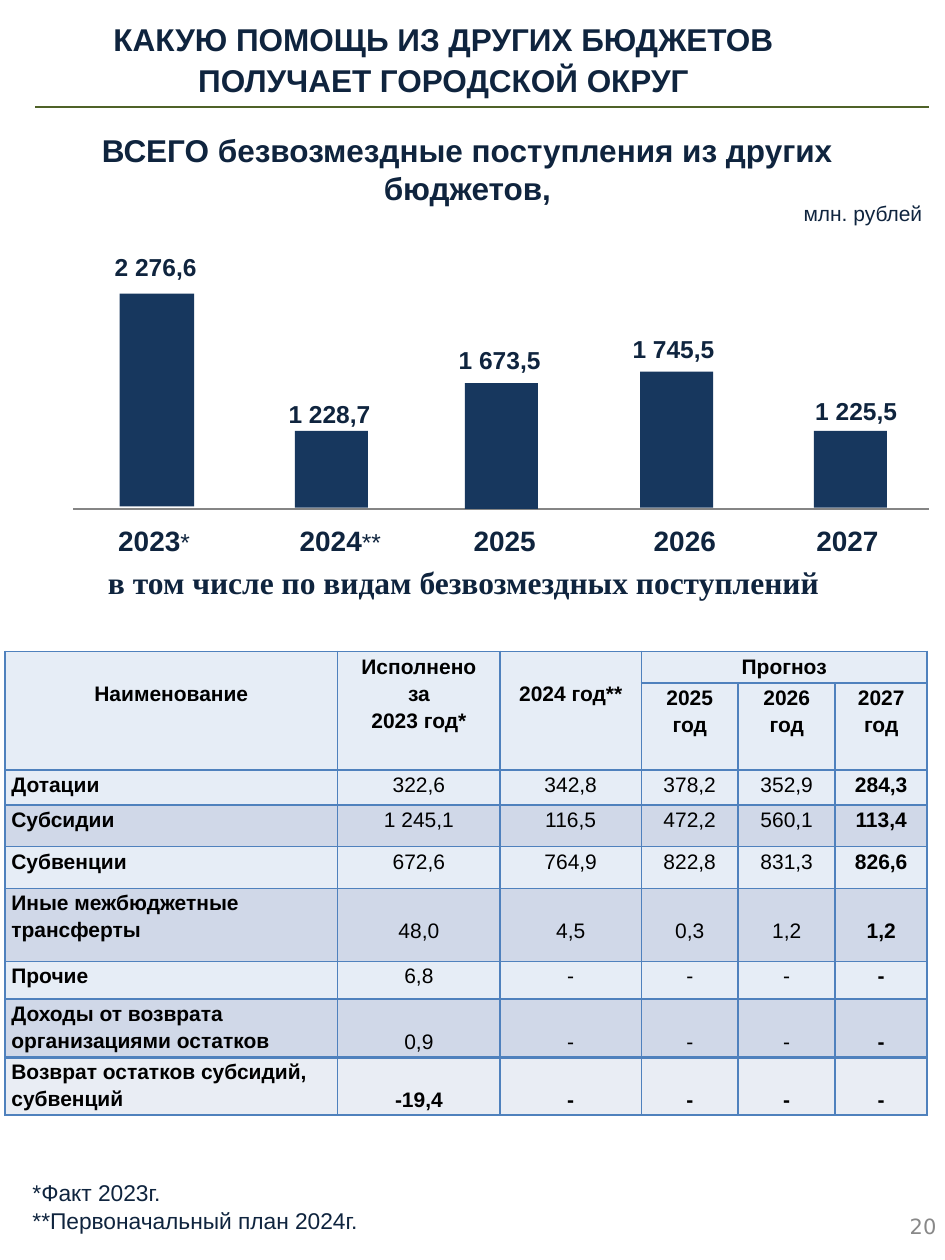
"""Build the slide on aid to the city district from other budgets."""
from dataclasses import dataclass

from lxml import etree
from pptx import Presentation
from pptx.dml.color import RGBColor
from pptx.enum.shapes import MSO_CONNECTOR, MSO_SHAPE
from pptx.enum.text import PP_ALIGN
from pptx.oxml.ns import qn
from pptx.util import Inches, Pt

LEFT, MID, RIGHT = PP_ALIGN.LEFT, PP_ALIGN.CENTER, PP_ALIGN.RIGHT
RECT = MSO_SHAPE.RECTANGLE
LINE = MSO_CONNECTOR.STRAIGHT


@dataclass(frozen=True)
class Theme:
    ink: str = "0F243E"
    bar: str = "17375E"
    axis: str = "858585"
    rule: str = "4F6228"
    edge: str = "4F81BD"
    grey: str = "888888"
    black: str = "000000"
    light: str = "E6EDF6"
    dark: str = "D0D8E8"
    last: str = "E9EDF4"
    sans: str = "Arial"
    serif: str = "Times New Roman"
    page: str = "DejaVu Sans"
    big: int = 18
    year: int = 16
    value: int = 14
    note: int = 13
    small: int = 12


def rgb(code):
    return RGBColor.from_string(code)


class Deck:
    def __init__(self, theme, slide):
        self.theme, self.slide = theme, slide

    def put(self, frame, paras, align=LEFT, color=None, form=None, **font):
        base = {"name": self.theme.sans, "size": self.theme.small, **font}
        for i, runs in enumerate(paras):
            para = frame.paragraphs[0] if i == 0 else frame.add_paragraph()
            for key, val in {"alignment": align, **(form or {})}.items():
                setattr(para, key, val)
            for words, extra in [(runs, {})] if isinstance(runs, str) else runs:
                run = para.add_run()
                run.text = words
                for key, val in {**base, **extra}.items():
                    setattr(run.font, key, Pt(val) if key == "size" else val)
                run.font.color.rgb = rgb(color or self.theme.ink)

    def text(self, box, paras, inset=(0.1, 0.05), wrap=True, **style):
        frame = self.slide.shapes.add_textbox(*map(Inches, box)).text_frame
        side, top = map(Inches, inset)
        form = {"word_wrap": wrap, "margin_left": side, "margin_right": side,
                "margin_top": top, "margin_bottom": top}
        for key, val in form.items():
            setattr(frame, key, val)
        self.put(frame, paras, **style)
        return frame

    def tabs(self, frame, stops):
        props = frame.paragraphs[0]._p.get_or_add_pPr()
        tabs = etree.SubElement(props, qn("a:tabLst"))
        for stop in stops:
            etree.SubElement(tabs, qn("a:tab"), pos=str(Inches(stop)), algn="l")

    def line(self, x1, x2, y, color, width):
        line = self.slide.shapes.add_connector(LINE, *map(Inches, (x1, y, x2, y)))
        line.line.color.rgb = rgb(color)
        line.line.width = Pt(width)
        etree.SubElement(line._element.spPr, qn("a:effectLst"))

    def bar(self, box):
        bar = self.slide.shapes.add_shape(RECT, *map(Inches, box))
        bar.shadow.inherit = False
        bar.fill.solid()
        bar.fill.fore_color.rgb = rgb(self.theme.bar)
        bar.line.fill.background()

    def edges(self, cell, **widths):
        props = cell._tc.get_or_add_tcPr()
        for side in "LRTB":
            width = str(Pt(widths.get(side, 1)))
            line = etree.SubElement(props, qn("a:ln" + side), w=width)
            fill = etree.SubElement(line, qn("a:solidFill"))
            etree.SubElement(fill, qn("a:srgbClr"), val=self.theme.edge)

    def cell(self, cell, words, fill, drop=0, align=MID, bold=False, **widths):
        form = {"margin_left": Inches(0.05), "margin_right": Inches(0.05),
                "margin_top": Inches(drop), "margin_bottom": 0}
        for key, val in form.items():
            setattr(cell, key, val)
        self.edges(cell, **widths)
        cell.fill.solid()
        cell.fill.fore_color.rgb = rgb(fill)
        if words:
            self.put(cell.text_frame, words.split("\n"), align=align, bold=bold,
                     color=self.theme.black, form={"line_spacing": 1.15})

    def table(self, box, cols, rows):
        shape = self.slide.shapes.add_table(len(rows), len(cols), *map(Inches, box))
        grid = shape.table
        for col, width in zip(grid.columns, cols):
            col.width = Inches(width)
        for row, height in zip(grid.rows, rows):
            row.height = Inches(height)
        return grid


BARS = [
    (0.95, 2.33, 0.59, 1.69, 0.91, 2.0, "2 276,6"),
    (2.34, 3.42, 0.58, 0.61, 2.29, 3.17, "1 228,7"),
    (3.69, 3.04, 0.58, 1.0, 3.64, 2.74, "1 673,5"),
    (5.08, 2.95, 0.58, 1.08, 5.02, 2.65, "1 745,5"),
    (6.46, 3.42, 0.58, 0.61, 6.47, 3.14, "1 225,5"),
]
COLS = [2.64, 1.29, 1.12, 0.77, 0.77, 0.73]
ROWS = [0.25, 0.69, 0.28, 0.33, 0.33, 0.58, 0.3, 0.46, 0.46]
HEAD = [
    ["Наименование", "Исполнено\nза\n2023 год*", "2024 год**", "Прогноз", "", ""],
    ["", "", "", "2025 год", "2026 год", "2027 год"],
]
BODY = [
    ["Дотации", "322,6", "342,8", "378,2", "352,9", "284,3"],
    ["Субсидии", "1 245,1", "116,5", "472,2", "560,1", "113,4"],
    ["Субвенции", "672,6", "764,9", "822,8", "831,3", "826,6"],
    ["Иные межбюджетные трансферты", "48,0", "4,5", "0,3", "1,2", "1,2"],
    ["Прочие", "6,8", "-", "-", "-", "-"],
    ["Доходы от возврата организациями остатков", "0,9", "-", "-", "-", "-"],
    ["Возврат остатков субсидий, субвенций", "-19,4", "-", "-", "-", "-"],
]
TALL = 0.4
DROP = 0.22


def chart(deck):
    t = deck.theme
    deck.line(0.58, 7.37, 4.04, t.axis, 0.72)
    for *box, x, y, value in BARS:
        deck.bar(box)
        deck.text((x, y, 0.81, 0.24), [value], inset=(0, 0), wrap=False,
                  size=t.value, bold=True)
    star = {"size": t.value, "bold": False}
    years = [("\t2023", {}), ("*", star), ("\t2024", {}), ("**", star),
             ("\t2025\t2026\t2027", {})]
    frame = deck.text((0.36, 4.11, 6.92, 0.37), [years], size=t.year, bold=True)
    deck.tabs(frame, [0.48, 1.92, 3.3, 4.73, 6.02])


def aid(deck):
    t = deck.theme
    grid = deck.table((0.04, 5.17, 7.33, sum(ROWS)), COLS, ROWS)
    for col in range(3):
        grid.cell(0, col).merge(grid.cell(1, col))
    grid.cell(0, 3).merge(grid.cell(0, 5))
    for r, row in enumerate(HEAD):
        for c, words in enumerate(row):
            drop = DROP if c in (0, 2) else 0
            deck.cell(grid.cell(r, c), words, t.light, drop, bold=True)
    end = len(BODY) - 1
    for r, row in enumerate(BODY):
        fill = t.last if r == end else (t.light, t.dark)[r % 2]
        widths = {"T": 2} if r == end else {"B": 2} if r == end - 1 else {}
        for c, words in enumerate(row):
            drop = DROP if c and ROWS[r + 2] > TALL else 0
            deck.cell(grid.cell(r + 2, c), words, fill, drop, MID if c else LEFT,
                      c in (0, 5) or r == end, **widths)


def main():
    show = Presentation()
    show.slide_width, show.slide_height = Inches(7.5), Inches(10)
    t = Theme()
    deck = Deck(t, show.slides.add_slide(show.slide_layouts[6]))
    head = {"align": MID, "size": t.big, "bold": True}
    deck.text((0.17, 0.15, 6.7, 0.65),
              ["КАКУЮ ПОМОЩЬ ИЗ ДРУГИХ БЮДЖЕТОВ", "ПОЛУЧАЕТ ГОРОДСКОЙ ОКРУГ"],
              inset=(0, 0.01), form={"space_before": Pt(1), "space_after": Pt(1)}, **head)
    deck.line(0.28, 7.37, 0.85, t.rule, 0.75)
    deck.text((0.28, 0.99, 6.86, 0.71),
              ["ВСЕГО безвозмездные поступления из других бюджетов,"], **head)
    deck.text((6.26, 1.54, 1.16, 0.3), ["млн. рублей"], wrap=False, align=RIGHT)
    chart(deck)
    deck.text((0.3, 4.42, 6.76, 0.4),
              ["в том числе по видам безвозмездных поступлений"], name=t.serif, **head)
    aid(deck)
    deck.text((0.16, 9.31, 5.6, 0.54),
              ["*Факт 2023г.", "**Первоначальный план 2024г."], size=t.note)
    deck.text((7.22, 9.63, 0.25, 0.23), ["20"], inset=(0, 0), wrap=False,
              name=t.page, color=t.grey)
    show.save("out.pptx")


if __name__ == "__main__":
    main()
